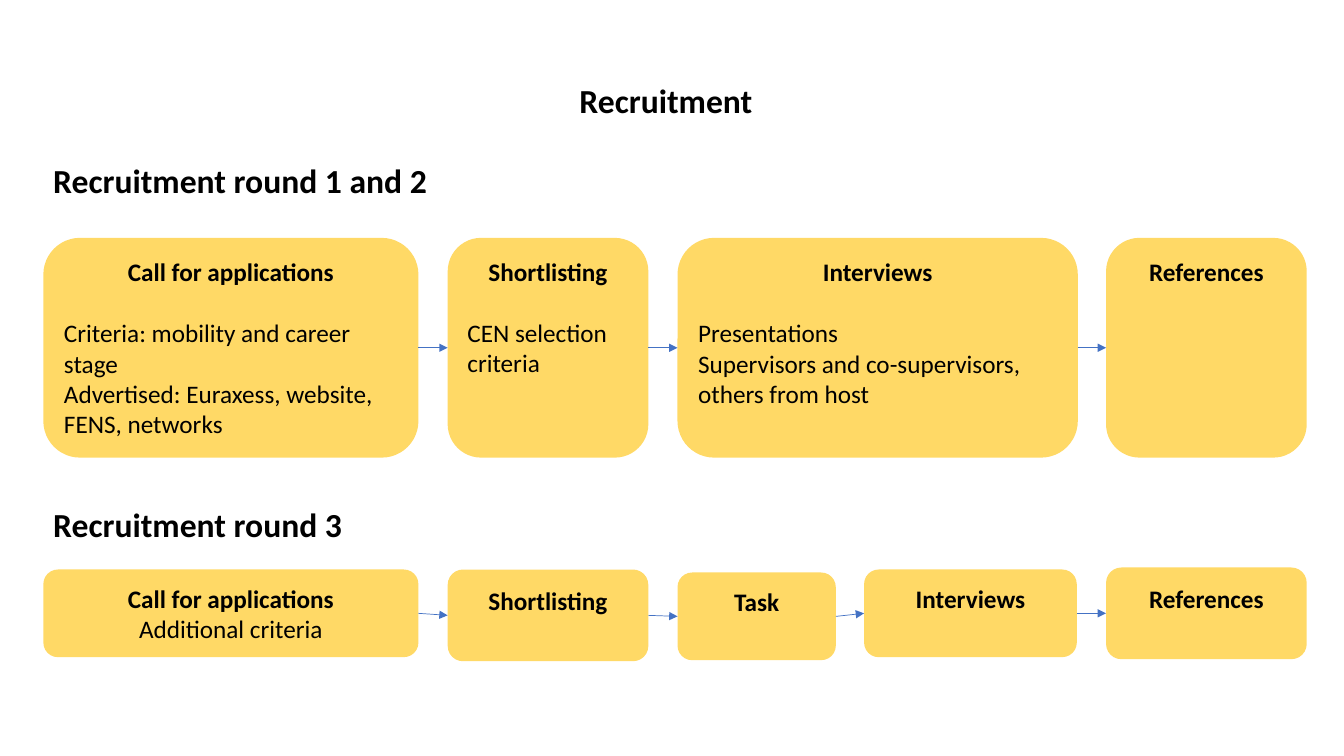
from dataclasses import dataclass

from lxml import etree
from pptx import Presentation
from pptx.dml.color import RGBColor
from pptx.enum.shapes import MSO_CONNECTOR, MSO_SHAPE
from pptx.enum.text import MSO_ANCHOR, PP_ALIGN
from pptx.oxml.ns import qn
from pptx.util import Inches, Pt

ROUNDED = MSO_SHAPE.ROUNDED_RECTANGLE
STRAIGHT = MSO_CONNECTOR.STRAIGHT
TOP = MSO_ANCHOR.TOP
LEFT, CENTER = PP_ALIGN.LEFT, PP_ALIGN.CENTER
LEFT_SIDE, RIGHT_SIDE = 1, 3


@dataclass(frozen=True)
class Theme:
    font: str = "Calibri"
    ink: RGBColor = RGBColor(0x00, 0x00, 0x00)
    step_fill: RGBColor = RGBColor(0xFF, 0xD9, 0x66)
    arrow: RGBColor = RGBColor(0x44, 0x72, 0xC4)
    heading: Pt = Pt(24)
    body: Pt = Pt(18)
    title_gap: Pt = Pt(22)
    arrow_width: Pt = Pt(0.5)
    line_height: float = 0.3  # inches, one line of body text
    corner_inset: float = 0.05  # share of a box's height


THEME = Theme()

# Each step: left, top, width, height, title, details
ROUNDS_1_AND_2 = [
    (0.43, 2.36, 3.72, 2.18, "Call for applications",
     ["Criteria: mobility and career stage",
      "Advertised: Euraxess, website, FENS, networks"]),
    (4.44, 2.36, 1.99, 2.18, "Shortlisting", ["CEN selection criteria"]),
    (6.72, 2.36, 3.97, 2.18, "Interviews",
     ["Presentations", "Supervisors and co-supervisors, others from host"]),
    (10.97, 2.36, 1.99, 2.18, "References", []),
]
ROUND_3 = [
    (0.43, 5.65, 3.72, 0.87, "Call for applications", ["Additional criteria"]),
    (4.44, 5.65, 1.99, 0.91, "Shortlisting", []),
    (6.72, 5.68, 1.57, 0.87, "Task", []),
    (8.57, 5.65, 2.11, 0.87, "Interviews", []),
    (10.97, 5.63, 1.99, 0.91, "References", []),
]


def write_para(para, text, size, bold, align):
    para.text = text
    para.alignment = align
    formats = {"name": THEME.font, "size": size, "bold": bold}
    for name, value in formats.items():
        setattr(para.font, name, value)
    para.font.color.rgb = THEME.ink


def add_heading(page, left, top, width, text, align=LEFT):
    box = page.shapes.add_textbox(Inches(left), Inches(top), Inches(width), Inches(0.5))
    box.text_frame.word_wrap = True
    write_para(box.text_frame.paragraphs[0], text, THEME.heading, True, align)


def add_step(page, step, line_count, detail_align, title_gap):
    """Place one step, its text starting where line_count centred lines would."""
    left, top, width, height, title, details = step
    box = page.shapes.add_shape(
        ROUNDED, Inches(left), Inches(top), Inches(width), Inches(height))
    box.shadow.inherit = False
    box.fill.solid()
    box.fill.fore_color.rgb = THEME.step_fill
    box.line.fill.background()

    frame = box.text_frame
    above_text = (height - line_count * THEME.line_height) / 2
    formats = {
        "word_wrap": True,
        "vertical_anchor": TOP,
        "margin_top": Inches(above_text - THEME.corner_inset * height),
    }
    for name, value in formats.items():
        setattr(frame, name, value)
    write_para(frame.paragraphs[0], title, THEME.body, True, CENTER)
    if details:
        frame.paragraphs[0].space_after = title_gap
    for detail in details:
        write_para(frame.add_paragraph(), detail, THEME.body, False, detail_align)
    return box


def add_arrow(page, source, target):
    arrow = page.shapes.add_connector(STRAIGHT, 0, 0, 0, 0)
    arrow.begin_connect(source, RIGHT_SIDE)
    arrow.end_connect(target, LEFT_SIDE)
    arrow.line.color.rgb = THEME.arrow
    arrow.line.width = THEME.arrow_width
    line = arrow.line._get_or_add_ln()
    etree.SubElement(line, qn("a:tailEnd"), type="triangle")
    etree.SubElement(arrow._element.spPr, qn("a:effectLst"))


def add_round(page, heading, heading_top, steps, line_count, detail_align, title_gap):
    add_heading(page, 0.43, heading_top, 4.1, heading)
    boxes = [add_step(page, step, line_count, detail_align, title_gap) for step in steps]
    for source, target in zip(boxes, boxes[1:]):
        add_arrow(page, source, target)


def main():
    deck = Presentation()
    deck.slide_width, deck.slide_height = Inches(13.33), Inches(7.5)
    page = deck.slides.add_slide(deck.slide_layouts[6])
    add_heading(page, 4.44, 0.74, 4.33, "Recruitment", CENTER)
    add_round(page, "Recruitment round 1 and 2", 1.54, ROUNDS_1_AND_2,
              6, LEFT, THEME.title_gap)
    add_round(page, "Recruitment round 3", 4.95, ROUND_3, 2, CENTER, Pt(0))
    deck.save("out.pptx")


if __name__ == "__main__":
    main()
